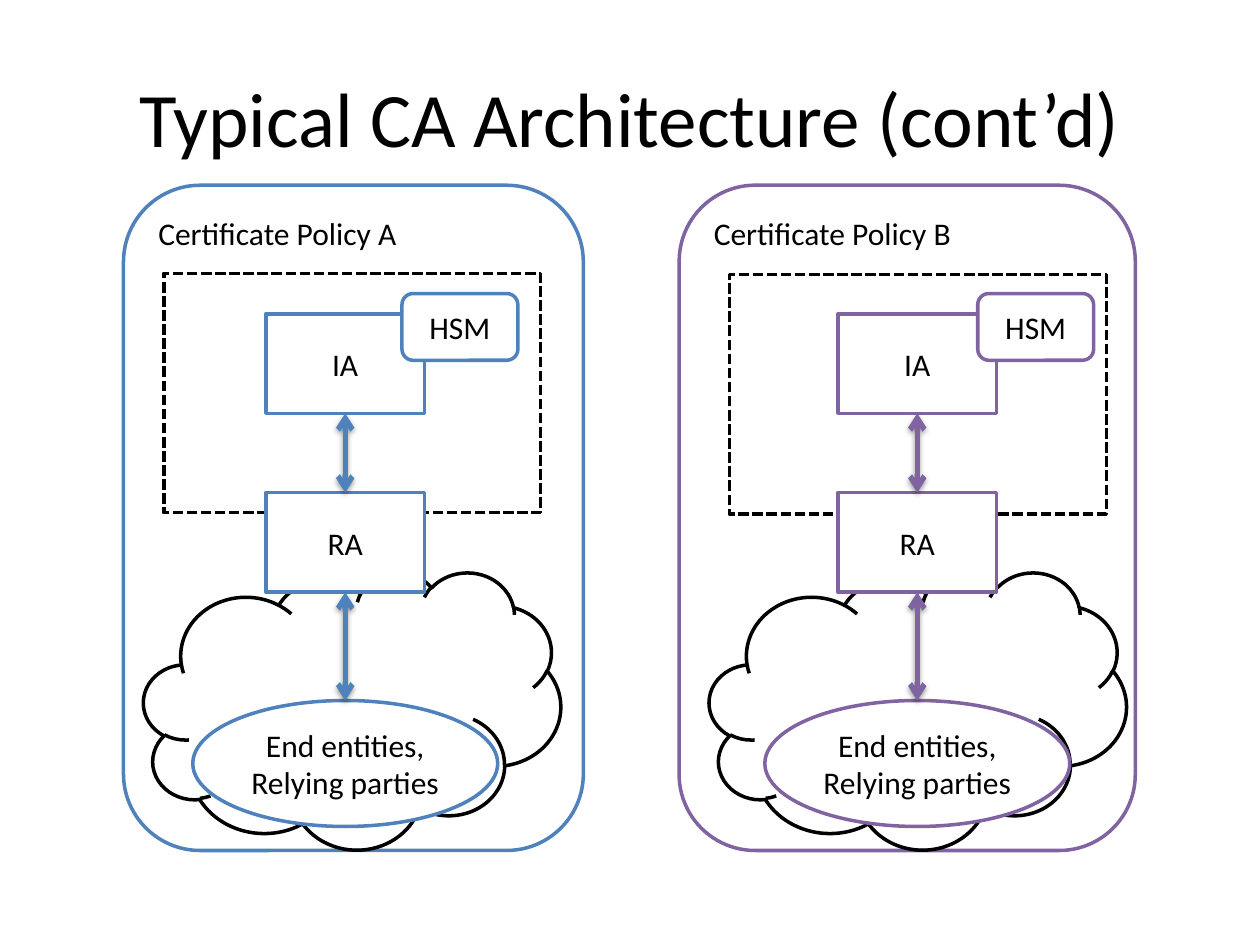
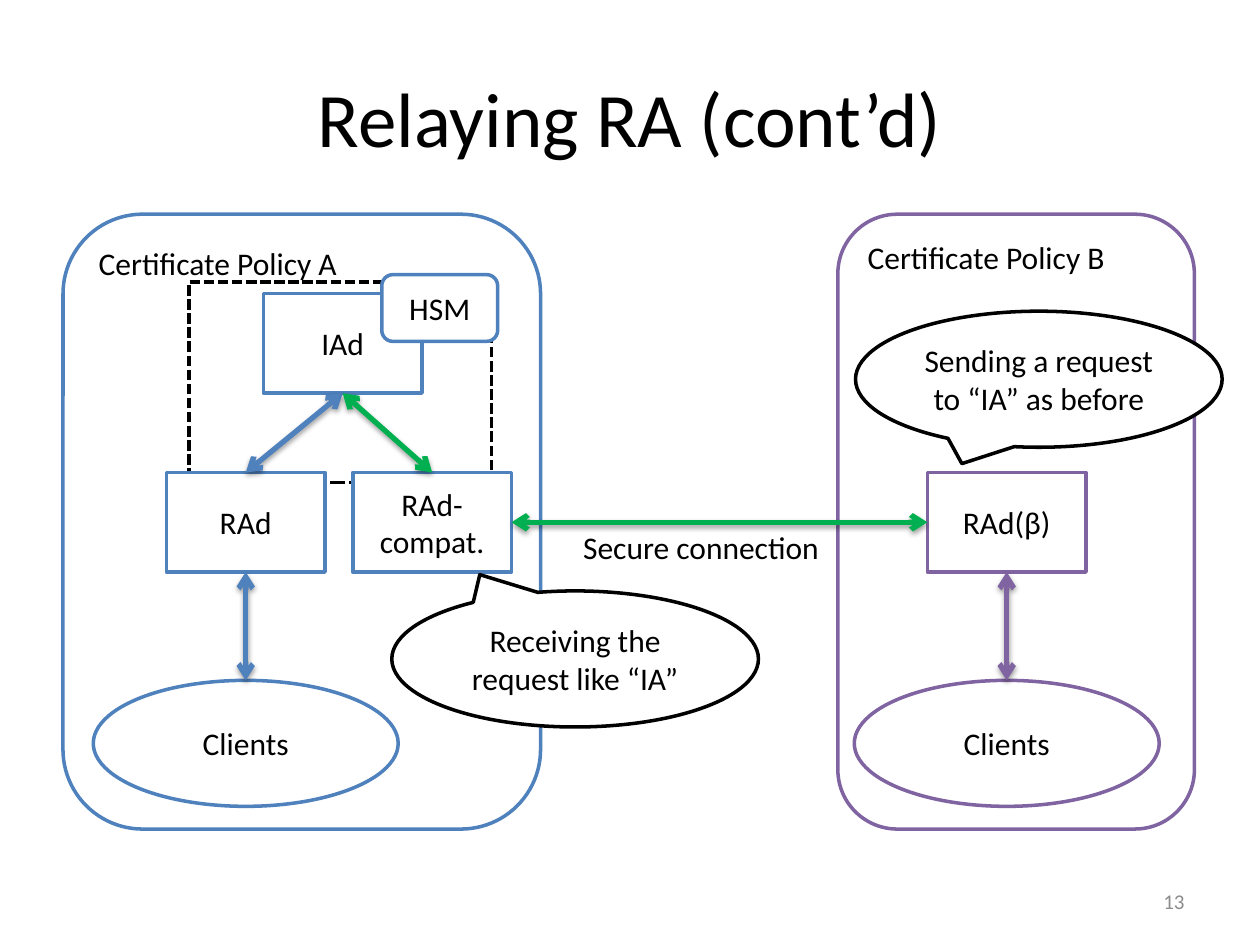
import dataclasses
import typing

import lxml.etree
import pptx
import pptx.dml.color
import pptx.enum.dml
import pptx.enum.shapes
import pptx.enum.text
import pptx.oxml.ns
import pptx.util

COLORS = {
    "blue": "4F81BD",
    "purple": "8064A2",
    "green": "00B050",
    "black": "000000",
    "white": "FFFFFF",
    "gray": "8C8C8C",
}
FONT = "Calibri"
SLIDE_WIDTH = pptx.util.Inches(10)
SLIDE_HEIGHT = pptx.util.Inches(7.5)
COLUMNS, ROWS = 100, 75
TITLE_ONLY = 5
TOP, LEFT, BOTTOM, RIGHT = range(4)
NODE_WIDTH, NODE_HEIGHT = 12.6, 7.9
CLIENTS_WIDTH, CLIENTS_HEIGHT = 24.2, 10
SHAPES = pptx.enum.shapes.MSO_SHAPE
ALIGN = pptx.enum.text.PP_ALIGN
ANCHOR = pptx.enum.text.MSO_ANCHOR


class Area(typing.NamedTuple):
    column: float
    row: float
    columns: float
    rows: float


@dataclasses.dataclass(frozen=True)
class Domain:
    policy: str
    color: str
    panel_column: float
    panel_columns: float
    zone_column: float
    zone_row: float
    node_column: float
    hsm_column: float
    clients: str


@dataclasses.dataclass(frozen=True)
class Site:
    policy: str
    color: str
    panel_column: float
    panel_columns: float
    authority: str
    authority_column: float


@dataclasses.dataclass(frozen=True)
class Callout:
    words: str
    area: Area
    pointer: tuple[float, float]


DOMAINS = (
    Domain("Certificate Policy B", "purple", 53.9, 36.2, 57.9, 21.8, 66.5, 77.6,
           "End entities,\nRelying parties"),
    Domain("Certificate Policy A", "blue", 9.8, 36.5, 13, 21.7, 21.1, 31.9,
           "End entities, Relying parties"),
)
SITE_A = Site("Certificate Policy A", "blue", 5, 37.9, "RAd", 13.2)
SITE_B = Site("Certificate Policy B", "purple", 66.5, 28.3, "RAd(β)", 73.6)
CALLOUTS = (
    Callout("Sending a request to “IA” as before", Area(67.9, 24.7, 29.1, 10.8), (-0.21, 0.62)),
    Callout("Receiving the request like “IA”", Area(31.1, 46.9, 29.1, 10.8), (-0.26, -0.62)),
)


def across(columns: float) -> int:
    return round(SLIDE_WIDTH * columns / COLUMNS)


def down(rows: float) -> int:
    return round(SLIDE_HEIGHT * rows / ROWS)


def lengths(area: Area) -> tuple[int, int, int, int]:
    return across(area.column), down(area.row), across(area.columns), down(area.rows)


def rgb(color: str) -> pptx.dml.color.RGBColor:
    return pptx.dml.color.RGBColor.from_string(COLORS[color])


def write(box, words: str, size: float = 18, color: str = "black",
          align=ALIGN.CENTER, anchor=ANCHOR.MIDDLE) -> None:
    frame = box.text_frame
    frame.text = words
    frame.word_wrap = True
    frame.vertical_anchor = anchor
    for para in frame.paragraphs:
        para.alignment = align
        for span in para.runs:
            span.font.name = FONT
            span.font.size = pptx.util.Pt(size)
            span.font.color.rgb = rgb(color)


def add_page(deck, title: str):
    page = deck.slides.add_slide(deck.slide_layouts[TITLE_ONLY])
    heading = page.shapes.title
    heading.left, heading.top, heading.width, heading.height = lengths(Area(5, 3, 90, 12.5))
    write(heading, title, size=44)
    return page


def add_outline(page, kind, area: Area, color: str = "black", filled: bool = True,
                weight: float = 2):
    shape = page.shapes.add_shape(kind, *lengths(area))
    shape.shadow.inherit = False
    if filled:
        shape.fill.solid()
        shape.fill.fore_color.rgb = rgb("white")
    else:
        shape.fill.background()
    shape.line.color.rgb = rgb(color)
    shape.line.width = pptx.util.Pt(weight)
    return shape


def add_panel(page, policy: str, color: str, area: Area) -> None:
    panel = add_outline(page, SHAPES.ROUNDED_RECTANGLE, area, color)
    write(panel, policy, align=ALIGN.LEFT, anchor=ANCHOR.TOP)


def add_zone(page, area: Area) -> None:
    zone = add_outline(page, SHAPES.RECTANGLE, area, filled=False)
    zone.line.dash_style = pptx.enum.dml.MSO_LINE.SQUARE_DOT


def add_node(page, words: str, color: str, column: float, row: float):
    area = Area(column, row, NODE_WIDTH, NODE_HEIGHT)
    node = add_outline(page, SHAPES.RECTANGLE, area, color)
    write(node, words)
    return node


def add_hsm(page, color: str, column: float, row: float) -> None:
    module = add_outline(page, SHAPES.ROUNDED_RECTANGLE, Area(column, row, 9.2, 5.3), color)
    write(module, "HSM")


def add_clients(page, words: str, color: str, node_column: float, row: float):
    column = node_column + (NODE_WIDTH - CLIENTS_WIDTH) / 2
    area = Area(column, row, CLIENTS_WIDTH, CLIENTS_HEIGHT)
    clients = add_outline(page, SHAPES.OVAL, area, color)
    write(clients, words)
    return clients


def add_child(parent, tag: str, **attributes: str):
    return lxml.etree.SubElement(parent, pptx.oxml.ns.qn(tag), attributes)


def link(page, start, end, color: str, start_side: int = BOTTOM, end_side: int = TOP) -> None:
    arrow = page.shapes.add_connector(pptx.enum.shapes.MSO_CONNECTOR.STRAIGHT, 0, 0, 0, 0)
    arrow.begin_connect(start, start_side)
    arrow.end_connect(end, end_side)
    arrow.line.color.rgb = rgb(color)
    arrow.line.width = pptx.util.Pt(3)
    properties = arrow.element.spPr
    line = properties.find(pptx.oxml.ns.qn("a:ln"))
    add_child(line, "a:headEnd", type="arrow")
    add_child(line, "a:tailEnd", type="arrow")
    effects = add_child(properties, "a:effectLst")
    shadow = add_child(effects, "a:outerShdw", blurRad=str(pptx.util.Pt(3.1)),
                       dist=str(pptx.util.Pt(1.6)), dir="5400000", rotWithShape="0")
    shade = add_child(shadow, "a:srgbClr", val=COLORS["black"])
    add_child(shade, "a:alpha", val="38000")


def add_domain(page, domain: Domain) -> None:
    add_panel(page, domain.policy, domain.color,
              Area(domain.panel_column, 14.7, domain.panel_columns, 52.8))
    add_zone(page, Area(domain.zone_column, domain.zone_row, 29.9, 19))
    add_outline(page, SHAPES.CLOUD, Area(domain.zone_column - 1.6, 45.4, 33.1, 22), filled=False)
    issuing = add_node(page, "IA", domain.color, domain.node_column, 24.9)
    registration = add_node(page, "RA", domain.color, domain.node_column, 39.1)
    clients = add_clients(page, domain.clients, domain.color, domain.node_column, 55.6)
    link(page, issuing, registration, domain.color)
    link(page, registration, clients, domain.color)
    add_hsm(page, domain.color, domain.hsm_column, 23.3)


def add_site_panel(page, site: Site) -> None:
    add_panel(page, site.policy, site.color,
              Area(site.panel_column, 17, site.panel_columns, 48.8))


def add_site_nodes(page, site: Site):
    authority = add_node(page, site.authority, site.color, site.authority_column, 37.5)
    clients = add_clients(page, "Clients", site.color, site.authority_column, 54)
    link(page, authority, clients, site.color)
    return authority


def add_callout(page, callout: Callout) -> None:
    bubble = add_outline(page, SHAPES.OVAL_CALLOUT, callout.area)
    for index, offset in enumerate(callout.pointer):
        bubble.adjustments[index] = offset
    write(bubble, callout.words)


def build_architecture(deck) -> None:
    page = add_page(deck, "Typical CA Architecture (cont’d)")
    for domain in DOMAINS:
        add_domain(page, domain)


def build_relaying(deck) -> None:
    page = add_page(deck, "Relaying RA (cont’d)")
    add_site_panel(page, SITE_A)
    add_zone(page, Area(15, 22.4, 24, 15.9))
    issuing = add_node(page, "IAd", "blue", 20.9, 23.3)
    local = add_site_nodes(page, SITE_A)
    add_site_panel(page, SITE_B)
    remote = add_site_nodes(page, SITE_B)
    link(page, issuing, local, "blue")
    compatible = add_node(page, "RAd-compat.", "blue", 28, 37.5)
    link(page, issuing, compatible, "green")
    link(page, compatible, remote, "green", RIGHT, LEFT)

    label = page.shapes.add_textbox(*lengths(Area(45.3, 41.4, 21, 4)))
    write(label, "Secure connection", align=ALIGN.LEFT, anchor=ANCHOR.TOP)
    label.text_frame.word_wrap = False
    label.text_frame.auto_size = pptx.enum.text.MSO_AUTO_SIZE.SHAPE_TO_FIT_TEXT

    for callout in CALLOUTS:
        add_callout(page, callout)
    add_hsm(page, "blue", 30.3, 21.8)
    number = page.shapes.add_textbox(*lengths(Area(71.7, 69.5, 23.3, 4)))
    write(number, "13", size=12, color="gray", align=ALIGN.RIGHT)


def main() -> None:
    deck = pptx.Presentation()
    deck.slide_width, deck.slide_height = SLIDE_WIDTH, SLIDE_HEIGHT
    build_architecture(deck)
    build_relaying(deck)
    deck.save("out.pptx")


if __name__ == "__main__":
    main()
